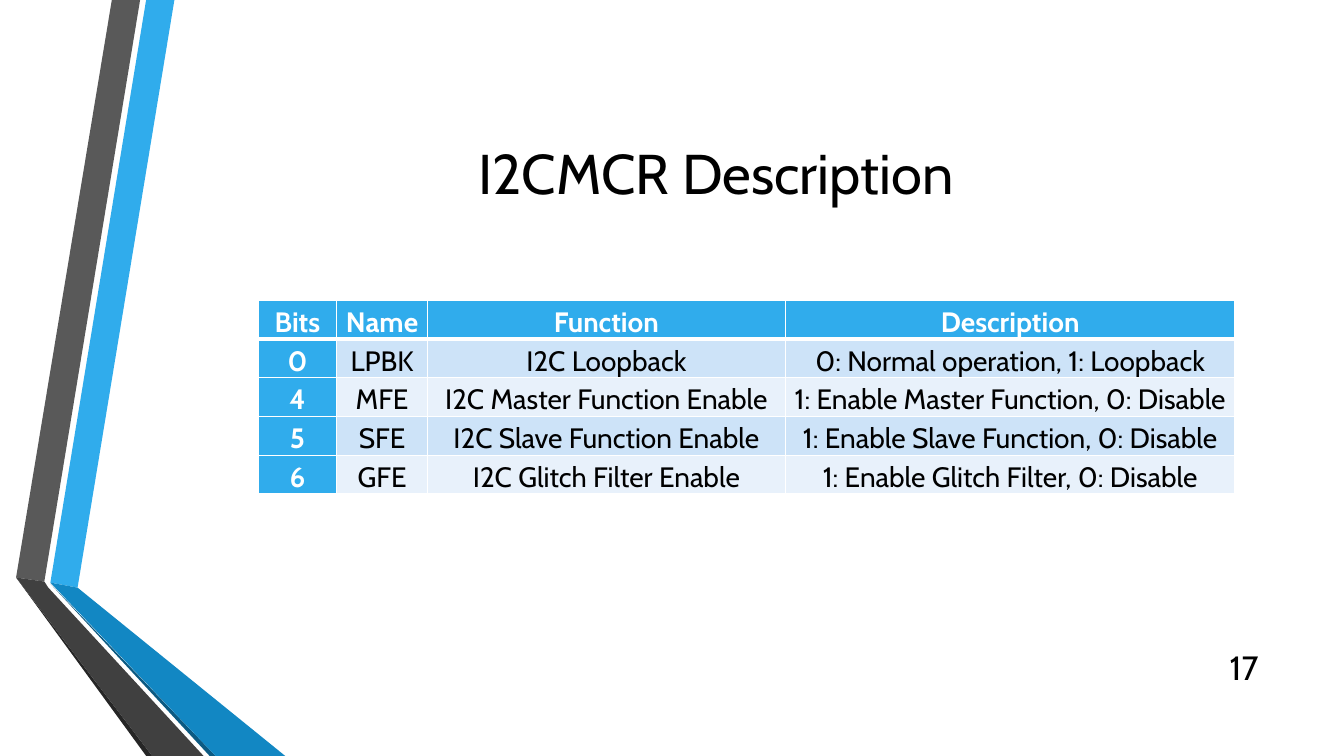
"""Build the register description slide."""
from dataclasses import dataclass

from lxml.etree import SubElement
from pptx import Presentation
from pptx.dml.color import RGBColor
from pptx.enum.text import MSO_ANCHOR, PP_ALIGN
from pptx.oxml.ns import qn
from pptx.shapes.base import BaseShape
from pptx.shapes.group import GroupShape
from pptx.slide import Slide
from pptx.table import _Cell as Cell
from pptx.text.text import TextFrame
from pptx.util import Inches, Pt

WIDTH, HEIGHT = Inches(13.33), Inches(7.5)
COLS, ROWS = 133.3, 75


@dataclass(frozen=True)
class Theme:
    """Colours, font and type sizes of the slide."""
    font: str = "Cabin"
    title: int = 40
    number: int = 24
    table: int = 20
    ink: str = "000000"
    paper: str = "FFFFFF"
    accent: str = "30ACEC"
    bands: tuple[str, str] = ("CDE3F8", "E8F1FB")


@dataclass(frozen=True)
class Box:
    """A place on the grid, in columns and rows."""
    left: float
    top: float
    width: float
    height: float


@dataclass(frozen=True)
class Stripe:
    """A filled outline with its corners on the grid."""
    fill: str
    points: tuple[tuple[float, float], ...]


@dataclass(frozen=True)
class Field:
    """One row of the table."""
    bits: str
    name: str
    role: str
    detail: str

    def texts(self) -> tuple[str, ...]:
        """Return the cell texts from left to right."""
        return self.bits, self.name, self.role, self.detail


THEME = Theme()
TITLE = Box(16.2, 7.5, 109.6, 19.2)
NUMBER = Box(119.8, 64.2, 6, 4)
TABLE = Box(25.6, 29.8, 96.9, 19.2)
WIDTHS = (7.8, 9, 35.5, 44.6)

STRIPES = (
    Stripe(THEME.accent, ((5, 57.8), (7.7, 58.3), (17.3, 0), (14.5, 0))),
    Stripe("595959", ((13.9, 0), (11.1, 0), (1.6, 57.3), (4.4, 57.7))),
    Stripe("262626", ((1.6, 57.3), (14.5, 75), (15.1, 75))),
    Stripe("0C5A82", ((5, 57.9), (20.8, 75), (21.4, 75))),
    Stripe("1287C3", ((5, 57.8), (21.4, 75), (28.3, 75), (7.7, 58.3))),
    Stripe("404040", ((20.2, 75), (4.8, 58.3), (4.4, 57.7), (1.6, 57.3), (15.1, 75))),
)

FIELDS = (
    Field("Bits", "Name", "Function", "Description"),
    Field("0", "LPBK", "I2C Loopback", "0: Normal operation, 1: Loopback"),
    Field("4", "MFE", "I2C Master Function Enable", "1: Enable Master Function, 0: Disable"),
    Field("5", "SFE", "I2C Slave Function Enable", "1: Enable Slave Function, 0: Disable"),
    Field("6", "GFE", "I2C Glitch Filter Enable", "1: Enable Glitch Filter, 0: Disable"),
)


def across(cols: float) -> int:
    """Turn grid columns into a length."""
    return round(WIDTH * cols / COLS)


def down(rows: float) -> int:
    """Turn grid rows into a length."""
    return round(HEIGHT * rows / ROWS)


def place(box: Box) -> tuple[int, int, int, int]:
    """Turn a grid box into left, top, width and height."""
    return across(box.left), down(box.top), across(box.width), down(box.height)


def write(frame: TextFrame, text: str, size: int, tint: str,
          align: PP_ALIGN, bold: bool = False) -> None:
    """Put one styled line of text in a frame."""
    frame.text = text
    line = frame.paragraphs[0]
    line.alignment = align
    font = line.runs[0].font
    font.name, font.size, font.bold = THEME.font, Pt(size), bold
    font.color.rgb = RGBColor.from_string(tint)


def label(shape: BaseShape, text: str, size: int, align: PP_ALIGN) -> None:
    """Write text in the middle of a shape."""
    frame = shape.text_frame
    frame.word_wrap = True
    frame.vertical_anchor = MSO_ANCHOR.MIDDLE
    write(frame, text, size, THEME.ink, align)


def draw(group: GroupShape, stripe: Stripe) -> None:
    """Draw one stripe without an outline."""
    first, *rest = [(across(x), down(y)) for x, y in stripe.points]
    pen = group.shapes.build_freeform(*first)
    pen.add_line_segments(rest, close=True)
    shape = pen.convert_to_shape()
    shape.shadow.inherit = False
    shape.fill.solid()
    shape.fill.fore_color.rgb = RGBColor.from_string(stripe.fill)
    shape.line.fill.background()


def edge(cell: Cell, side: str, points: int) -> None:
    """Add a border to one side of a cell."""
    line = SubElement(cell._tc.get_or_add_tcPr(), qn(f"a:ln{side}"), w=str(Pt(points)))
    SubElement(SubElement(line, qn("a:solidFill")), qn("a:srgbClr"), val=THEME.paper)


def fill_cell(cell: Cell, text: str, row: int, col: int) -> None:
    """Style and write one cell of the table."""
    head = row == 0 or col == 0
    thick = {(0, "B"), (1, "T")}
    for side in "LRTB":
        edge(cell, side, 3 if (row, side) in thick else 1)
    cell.fill.solid()
    shade = THEME.accent if head else THEME.bands[(row - 1) % 2]
    cell.fill.fore_color.rgb = RGBColor.from_string(shade)
    cell.margin_left = cell.margin_right = across(0.7)
    cell.margin_top = cell.margin_bottom = 0
    tint = THEME.paper if head else THEME.ink
    write(cell.text_frame, text, THEME.table, tint, PP_ALIGN.CENTER, head)
    cell.text_frame.paragraphs[0].line_spacing = 1.15


def add_fields(slide: Slide) -> None:
    """Add the table of register fields."""
    table = slide.shapes.add_table(len(FIELDS), len(WIDTHS), *place(TABLE)).table
    for col, width in enumerate(WIDTHS):
        table.columns[col].width = across(width)
    for row, field in enumerate(FIELDS):
        for col, text in enumerate(field.texts()):
            fill_cell(table.cell(row, col), text, row, col)


def main() -> None:
    """Build and save the slide."""
    deck = Presentation()
    deck.slide_width, deck.slide_height = WIDTH, HEIGHT
    slide = deck.slides.add_slide(deck.slide_layouts[5])
    group = slide.shapes.add_group_shape()
    for stripe in STRIPES:
        draw(group, stripe)
    title = slide.shapes.title
    title.left, title.top, title.width, title.height = place(TITLE)
    label(title, "I2CMCR Description", THEME.title, PP_ALIGN.CENTER)
    number = slide.shapes.add_textbox(*place(NUMBER))
    label(number, "17", THEME.number, PP_ALIGN.RIGHT)
    add_fields(slide)
    deck.save("out.pptx")


if __name__ == "__main__":
    main()
